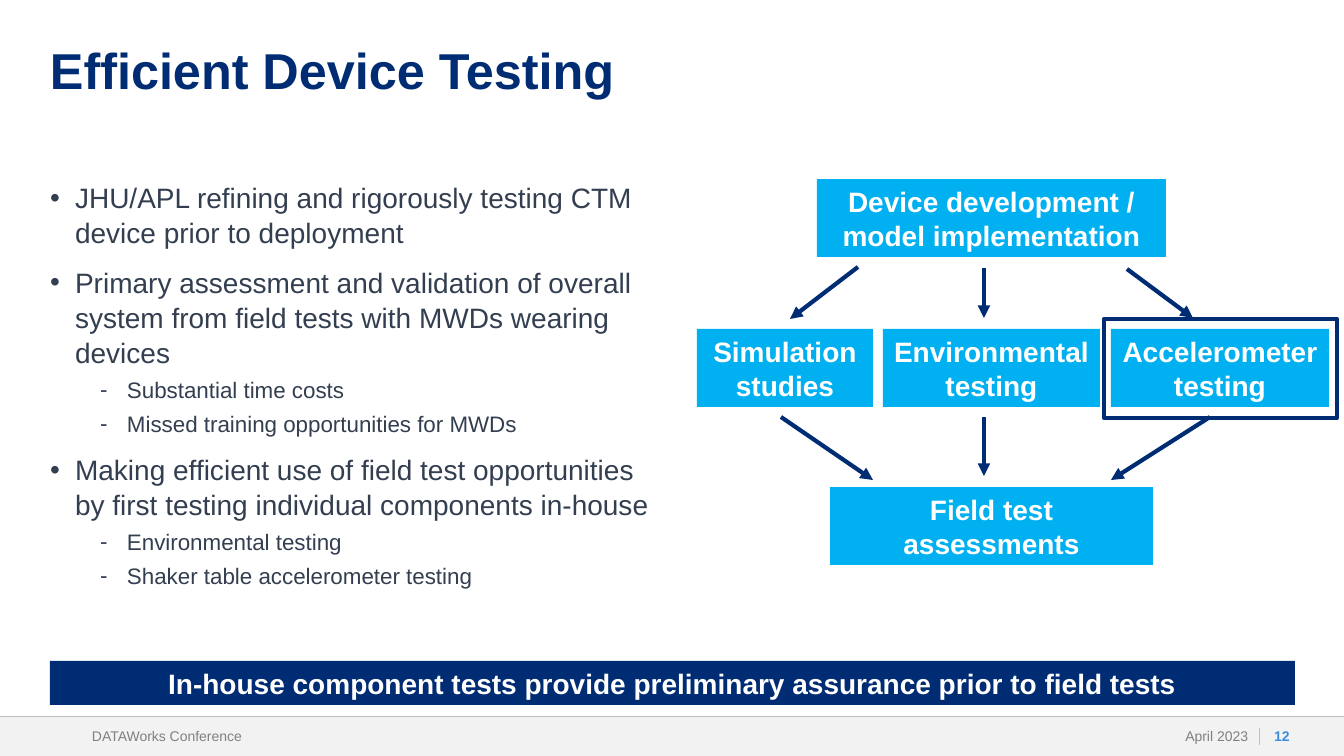
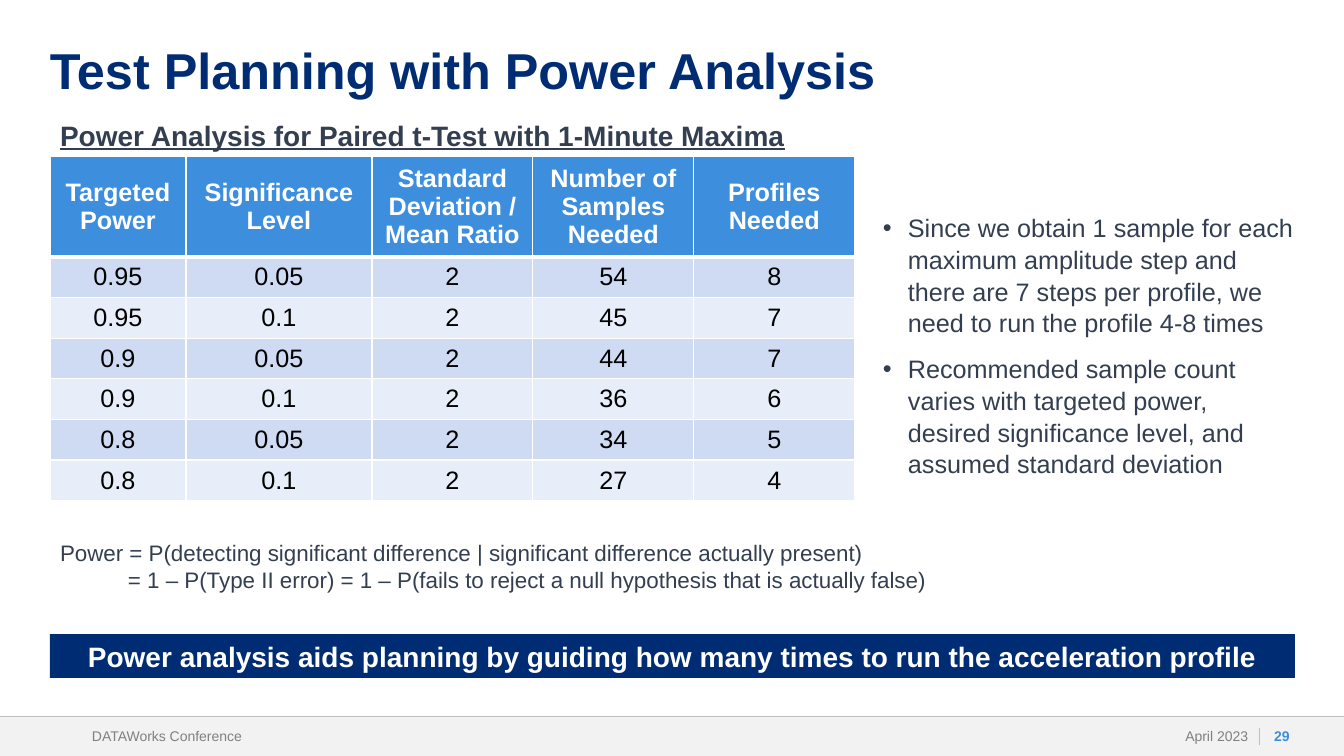
import pptx
import pptx.chart
import pptx.dml.color
import pptx.enum.shapes
import pptx.enum.text
import pptx.oxml.ns
import pptx.util
from lxml import etree

SCALE = 914400 / 100.8  # EMU in one px

NAVY, SKY, BLUE, SLATE = "002C73", "00B0F0", "3E8EDE", "333F50"
WHITE, BLACK, GREY = "FFFFFF", "000000", "808080"
PALE, RULE, BANDS = "F2F2F2", "BFBFBF", ("CEDBF2", "E8EEF9")

ALIGN = pptx.enum.text.PP_ALIGN
ANCHOR = pptx.enum.text.MSO_ANCHOR
qn = pptx.oxml.ns.qn


def px(n):
    return pptx.util.Emu(round(n * SCALE))


def rgb(code):
    return pptx.dml.color.RGBColor.from_string(code)


def add(node, tag, **attrs):
    return etree.SubElement(node, qn(tag), attrs)


class Deck:
    font = "Arial"
    left, wide, high = 50, 1344, 756
    pad = (10, 5)
    # Bullet levels: sign, text indent, hang, space before
    levels = (("•", 25, 25, 10), ("-", 77, 27, 4))

    def __init__(self):
        self.prs = pptx.Presentation()
        self.prs.slide_width = px(self.wide)
        self.prs.slide_height = px(self.high)
        self.slide = None

    # Title and footer of every slide
    def page(self, title, number):
        self.slide = self.prs.slides.add_slide(self.prs.slide_layouts[6])
        top = 716
        tall = self.high - top
        self.rect(0, top, self.wide, tall, fill=PALE)
        self.line(0, top, self.wide, top, RULE, 0.5)
        self.line(1259, 728, 1259, 745, RULE, 0.5)
        head = self.text(self.left, 46, 1243, 84, title, 36, NAVY, bold=True, pad=(0, 0))
        head.paragraphs[0].line_spacing = 0.9
        mid = ANCHOR.MIDDLE
        self.text(82, top, 353, tall, "DATAWorks Conference", 10, GREY, pad=(10, 0), anchor=mid)
        self.text(1107, top, 151, tall, "April 2023", 10, GREY, pad=(10, 0),
                  align=ALIGN.RIGHT, anchor=mid)
        self.text(1261, top, 42, tall, str(number), 10, BLUE, bold=True, pad=(0, 0),
                  align=ALIGN.CENTER, anchor=mid)

    def style(self, para, size, color, bold=False, under=False, align=None):
        para.alignment = align
        for run in para.runs:
            font = run.font
            font.name, font.size = self.font, pptx.util.Pt(size)
            font.bold, font.underline = bold, under
            font.color.rgb = rgb(color)

    def fit(self, frame, pad, anchor):
        frame.word_wrap = True
        frame.vertical_anchor = anchor
        frame.margin_left = frame.margin_right = px(pad[0])
        frame.margin_top = frame.margin_bottom = px(pad[1])

    def text(self, x, y, w, h, words, size, color, pad=pad, anchor=ANCHOR.TOP, **look):
        box = self.slide.shapes.add_textbox(px(x), px(y), px(w), px(h))
        frame = box.text_frame
        self.fit(frame, pad, anchor)
        frame.text = words
        for para in frame.paragraphs:
            self.style(para, size, color, **look)
        return frame

    def rect(self, x, y, w, h, fill=None, line=None, width=3):
        kind = pptx.enum.shapes.MSO_SHAPE.RECTANGLE
        shape = self.slide.shapes.add_shape(kind, px(x), px(y), px(w), px(h))
        shape.shadow.inherit = False
        if fill:
            shape.fill.solid()
            shape.fill.fore_color.rgb = rgb(fill)
        else:
            shape.fill.background()
        if line:
            shape.line.color.rgb = rgb(line)
            shape.line.width = pptx.util.Pt(width)
        else:
            shape.line.fill.background()
        return shape

    def box(self, x, y, w, h, words, fill=SKY):
        frame = self.rect(x, y, w, h, fill).text_frame
        self.fit(frame, self.pad, ANCHOR.MIDDLE)
        frame.text = words
        self.style(frame.paragraphs[0], 20, WHITE, bold=True, align=ALIGN.CENTER)

    def banner(self, y, words):
        self.box(self.left, y, 1245, 44, words, NAVY)

    def line(self, x1, y1, x2, y2, color, width, arrow=False):
        kind = pptx.enum.shapes.MSO_CONNECTOR.STRAIGHT
        link = self.slide.shapes.add_connector(kind, px(x1), px(y1), px(x2), px(y2))
        link.line.color.rgb = rgb(color)
        link.line.width = pptx.util.Pt(width)
        if arrow:
            add(link.line._get_or_add_ln(), "a:tailEnd", type="triangle")
        add(link._element.spPr, "a:effectLst")

    # Items are (level, words); sizes has one entry per level
    def bullets(self, x, y, w, h, items, sizes):
        words = "\n".join(words for _, words in items)
        frame = self.text(x, y, w, h, words, sizes[0], SLATE, pad=(0, 0))
        for i, (para, (level, _)) in enumerate(zip(frame.paragraphs, items)):
            sign, indent, hang, gap = self.levels[level]
            para.level = level
            prop = para._p.get_or_add_pPr()
            prop.set("marL", str(px(indent)))
            prop.set("indent", str(px(-hang)))
            add(prop, "a:buFont", typeface=self.font)
            add(prop, "a:buChar", char=sign)
            para.line_spacing = 1.05
            para.space_before = pptx.util.Pt(gap if i else 0)
            self.style(para, sizes[level], SLATE)

    def edge(self, cell, side, width):
        line = add(cell._tc.get_or_add_tcPr(), "a:ln" + side, w=str(pptx.util.Pt(width)))
        add(add(line, "a:solidFill"), "a:srgbClr", val=WHITE)

    def table(self, x, y, cols, rows, data, size):
        grid = self.slide.shapes.add_table(len(rows), len(cols), px(x), px(y),
                                           px(sum(cols)), px(sum(rows))).table
        for col, w in zip(grid.columns, cols):
            col.width = px(w)
        for r, (row, h) in enumerate(zip(grid.rows, rows)):
            row.height = px(h)
            head = r == 0
            for cell, words in zip(row.cells, data[r]):
                cell.text = words
                cell.vertical_anchor = ANCHOR.MIDDLE
                self.style(cell.text_frame.paragraphs[0], size, WHITE if head else BLACK,
                           bold=head, align=ALIGN.CENTER)
                # The rule below the header is thicker
                for side, thick in (("L", False), ("R", False), ("T", r == 1), ("B", head)):
                    self.edge(cell, side, 3 if thick else 1)
                cell.fill.solid()
                cell.fill.fore_color.rgb = rgb(BLUE if head else BANDS[(r - 1) % 2])


def device(deck):
    deck.page("Efficient Device Testing", 12)
    deck.bullets(deck.left, 179, 612, 505, [
        (0, "JHU/APL refining and rigorously testing CTM device prior to deployment"),
        (0, "Primary assessment and validation of overall system from field tests "
            "with MWDs wearing devices"),
        (1, "Substantial time costs"),
        (1, "Missed training opportunities for MWDs"),
        (0, "Making efficient use of field test opportunities by first testing "
            "individual components in-house"),
        (1, "Environmental testing"),
        (1, "Shaker table accelerometer testing"),
    ], (20, 16))

    # Flow chart
    tall = 78
    for x, y, w, words in (
        (817, 179, 349, "Device development / model implementation"),
        (697, 329, 176, "Simulation studies"),
        (883, 329, 217, "Environmental testing"),
        (1111, 329, 218, "Accelerometer testing"),
        (830, 487, 323, "Field test assessments"),
    ):
        deck.box(x, y, w, tall, words)
    for ends in (
        (858, 267, 790, 319), (984, 268, 984, 318), (1127, 269, 1193, 318),
        (781, 417, 873, 480), (1210, 417, 1111, 480), (984, 417, 984, 476),
    ):
        deck.line(*ends, NAVY, 3, arrow=True)
    deck.rect(1104, 319, 233, 99, line=NAVY)

    deck.banner(661, "In-house component tests provide preliminary assurance "
                     "prior to field tests")


def power(deck):
    deck.page("Test Planning with Power Analysis", 29)
    deck.bullets(883, 211, 412, 255, [
        (0, "Since we obtain 1 sample for each maximum amplitude step and there are "
            "7 steps per profile, we need to run the profile 4-8 times"),
        (0, "Recommended sample count varies with targeted power, desired "
            "significance level, and assumed standard deviation"),
    ], (18,))

    # Definition, with the second line set in under the equals sign
    frame = deck.text(deck.left, 534, 984, 65,
                      "Power = P(detecting significant difference | significant "
                      "difference actually present)\n"
                      "= 1 – P(Type II error) = 1 – P(fails to reject a null "
                      "hypothesis that is actually false)", 16, SLATE)
    frame.paragraphs[1]._p.get_or_add_pPr().set("marL", str(px(68)))

    # Sample sizes
    deck.table(deck.left, 156, [136, 186] + [161] * 3, [101] + [40, 41] * 3, [
        ("Targeted Power", "Significance Level", "Standard Deviation / Mean Ratio",
         "Number of Samples Needed", "Profiles Needed"),
        ("0.95", "0.05", "2", "54", "8"),
        ("0.95", "0.1", "2", "45", "7"),
        ("0.9", "0.05", "2", "44", "7"),
        ("0.9", "0.1", "2", "36", "6"),
        ("0.8", "0.05", "2", "34", "5"),
        ("0.8", "0.1", "2", "27", "4"),
    ], 18)
    deck.text(deck.left, 113, 772, 44, "Power Analysis for Paired t-Test with 1-Minute Maxima",
              20, SLATE, bold=True, under=True)

    deck.banner(634, "Power analysis aids planning by guiding how many times to run "
                     "the acceleration profile")


def main():
    deck = Deck()
    device(deck)
    power(deck)
    deck.prs.save("out.pptx")


if __name__ == "__main__":
    main()
